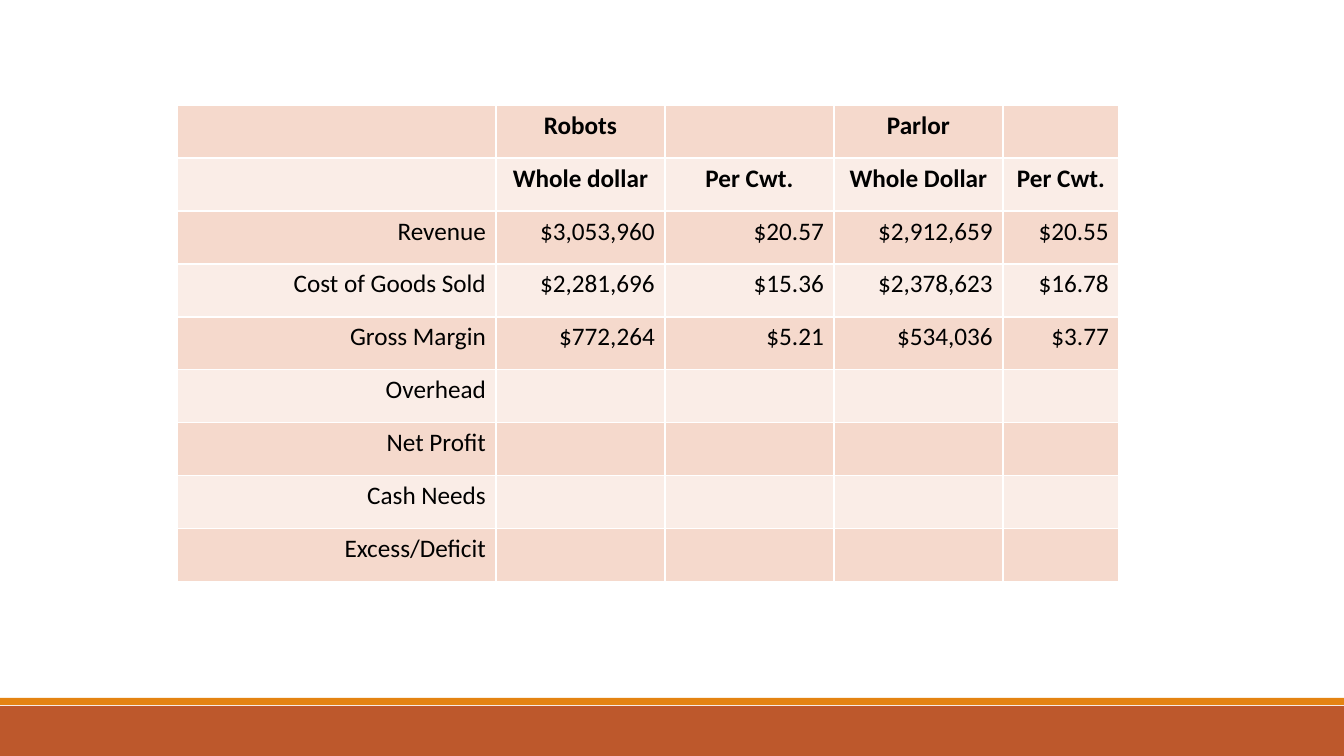
"""Build the robots versus parlor income comparison slide."""
from lxml.etree import SubElement
from pptx import Presentation
from pptx.dml.color import RGBColor
from pptx.enum.shapes import MSO_SHAPE
from pptx.enum.text import PP_ALIGN
from pptx.oxml.ns import qn
from pptx.util import Emu, Pt

COLORS = {
    "footer": "BD582C", "stripe": "E48312", "text": "000000",
    "border": "FFFFFF", "odd_row": "F5D9CC", "even_row": "FAEDE7",
}
HEADINGS = [
    ["", "Robots", "", "Parlor", ""],
    ["", "Whole dollar", "Per Cwt.", "Whole Dollar", "Per Cwt."],
]
RESULTS = [
    ["Revenue", "$3,053,960", "$20.57", "$2,912,659", "$20.55"],
    ["Cost of Goods Sold", "$2,281,696", "$15.36", "$2,378,623", "$16.78"],
    ["Gross Margin", "$772,264", "$5.21", "$534,036", "$3.77"],
]
TO_COMPLETE = ["Overhead", "Net Profit", "Cash Needs", "Excess/Deficit"]
ROWS = HEADINGS + RESULTS + [[label] + [""] * 4 for label in TO_COMPLETE]

SLIDE_WIDTH, SLIDE_HEIGHT = 1344, 756
BANDS = [("footer", 706, 50), ("stripe", 698, 7)]
TABLE_LEFT, TABLE_TOP, ROW_HEIGHT = 177, 105, 53
COLUMN_WIDTHS = [319, 169, 169, 169, 116]


def px(length):
    return Emu(round(length * 914400 / 100.8))


def rgb(name):
    return RGBColor.from_string(COLORS[name])


def add_borders(cell):
    properties = cell._tc.get_or_add_tcPr()
    for side in ("lnL", "lnR", "lnT", "lnB"):
        line = SubElement(properties, qn(f"a:{side}"), w=str(Pt(1)))
        fill = SubElement(line, qn("a:solidFill"))
        SubElement(fill, qn("a:srgbClr"), val=COLORS["border"])


def fill_cell(cell, text, is_heading, color):
    add_borders(cell)
    cell.fill.solid()
    cell.fill.fore_color.rgb = rgb(color)
    cell.text = text
    paragraph = cell.text_frame.paragraphs[0]
    paragraph.alignment = PP_ALIGN.CENTER if is_heading else PP_ALIGN.RIGHT
    font = paragraph.font
    font.name, font.size, font.bold = "Calibri", Pt(18), is_heading
    font.color.rgb = rgb("text")


def main():
    presentation = Presentation()
    presentation.slide_width = px(SLIDE_WIDTH)
    presentation.slide_height = px(SLIDE_HEIGHT)
    slide = presentation.slides.add_slide(presentation.slide_layouts[6])

    for color, top, height in BANDS:
        band = slide.shapes.add_shape(
            MSO_SHAPE.RECTANGLE, 0, px(top), px(SLIDE_WIDTH), px(height))
        band.shadow.inherit = False
        band.fill.solid()
        band.fill.fore_color.rgb = rgb(color)
        band.line.fill.background()

    table = slide.shapes.add_table(
        len(ROWS), len(COLUMN_WIDTHS), px(TABLE_LEFT), px(TABLE_TOP),
        px(sum(COLUMN_WIDTHS)), px(ROW_HEIGHT * len(ROWS))).table
    table.first_row = table.horz_banding = False
    for column, width in zip(table.columns, COLUMN_WIDTHS):
        column.width = px(width)
    for row_index, texts in enumerate(ROWS):
        table.rows[row_index].height = px(ROW_HEIGHT)
        color = "even_row" if row_index % 2 else "odd_row"
        for column_index, text in enumerate(texts):
            fill_cell(table.cell(row_index, column_index), text,
                      row_index < len(HEADINGS), color)

    presentation.save("out.pptx")


if __name__ == "__main__":
    main()
